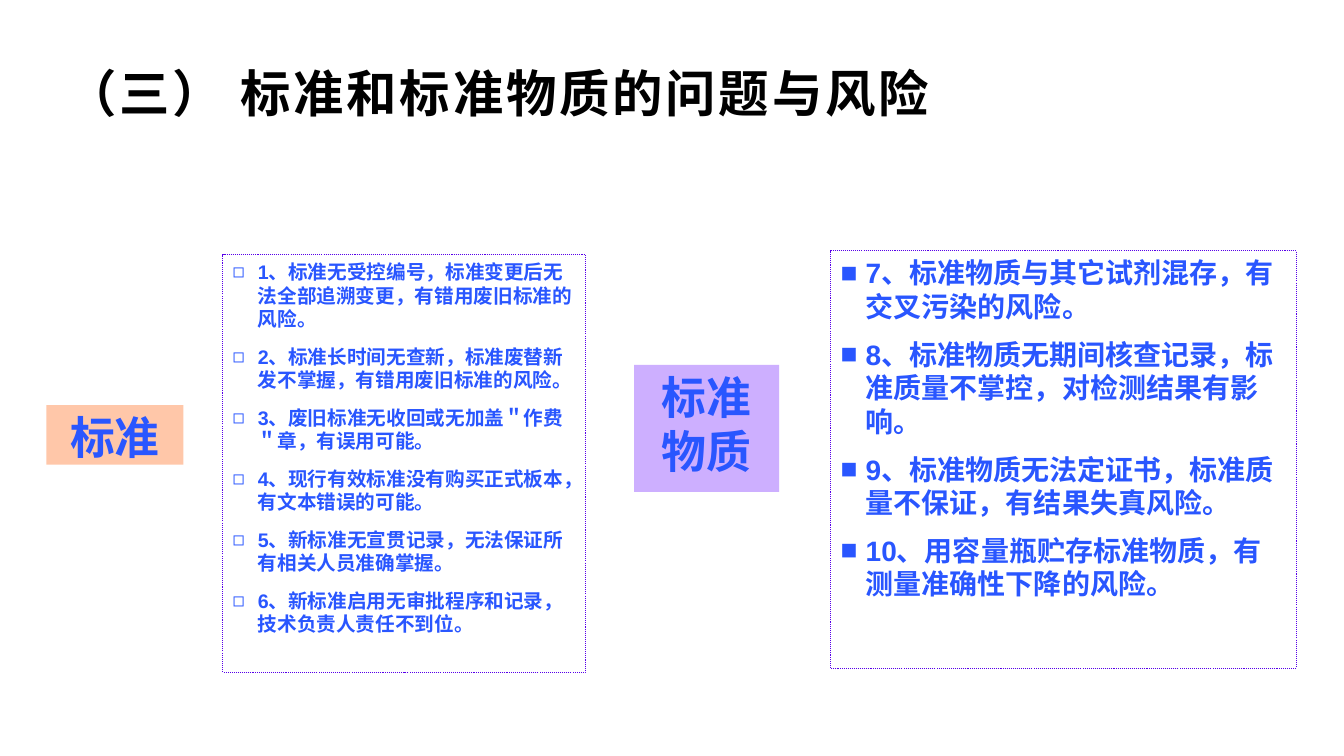
from lxml import etree
from pptx import Presentation
from pptx import util as u
from pptx.dml import color
from pptx.enum import dml, shapes, text
from pptx.oxml import ns

INCH = 72
BLUE, VIOLET = "2956FF", "5800E9"
TITLE = "（三） 标准和标准物质的问题与风险"
TITLE_BOX = (0.55, 0.58, 10.6, 0.68)
LABELS = [
    ("标准", (0.46, 4.02, 1.36, 0.59), "FFC7A9"),
    ("标准物质", (6.29, 3.62, 1.44, 1.26), "CDAFFF"),
]
RISK_LISTS = [
    ((2.21, 2.53, 3.6, 4.14), 14, "◻", [
        "1、标准无受控编号，标准变更后无法全部追溯变更，有错用废旧标准的风险。",
        "2、标准长时间无查新，标准废替新发不掌握，有错用废旧标准的风险。",
        "3、废旧标准无收回或无加盖＂作费＂章，有误用可能。",
        "4、现行有效标准没有购买正式板本，有文本错误的可能。",
        "5、新标准无宣贯记录，无法保证所有相关人员准确掌握。",
        "6、新标准启用无审批程序和记录，技术负责人责任不到位。",
    ]),
    ((8.24, 2.49, 4.62, 4.14), 20, "■", [
        "7、标准物质与其它试剂混存，有交叉污染的风险。",
        "8、标准物质无期间核查记录，标准质量不掌控，对检测结果有影响。",
        "9、标准物质无法定证书，标准质量不保证，有结果失真风险。",
        "10、用容量瓶贮存标准物质，有测量准确性下降的风险。",
    ]),
]


def rgb(code):
    return color.RGBColor.from_string(code)


def points(box):
    return [u.Pt(side * INCH) for side in box]


def add_run(paragraph, words, size, font, ink):
    run = paragraph.add_run()
    run.text = words
    run.font.size = u.Pt(size)
    run.font.name = font
    run.font.bold = True
    run.font.color.rgb = rgb(ink)
    properties = run._r.get_or_add_rPr()
    etree.SubElement(properties, ns.qn("a:ea")).set("typeface", font)
    return properties


def add_bullet(paragraph, mark):
    properties = paragraph._p.get_or_add_pPr()
    properties.set("marL", str(u.Pt(18)))
    properties.set("indent", str(-u.Pt(18)))
    etree.SubElement(properties, ns.qn("a:buFont")).set("typeface", "Arial")
    etree.SubElement(properties, ns.qn("a:buChar")).set("char", mark)


def add_box(slide, box, lines, size, align, fill=None, mark=None):
    shape = slide.shapes.add_shape(shapes.MSO_SHAPE.RECTANGLE, *points(box))
    shape.shadow.inherit = False
    if fill:
        shape.fill.solid()
        shape.fill.fore_color.rgb = rgb(fill)
        shape.line.fill.background()
    else:
        shape.fill.background()
        shape.line.color.rgb = rgb(VIOLET)
        shape.line.width = u.Pt(0.75)
        shape.line.dash_style = dml.MSO_LINE.ROUND_DOT
    frame = shape.text_frame
    frame.word_wrap = True
    frame.vertical_anchor = text.MSO_ANCHOR.TOP
    for index, words in enumerate(lines):
        paragraph = frame.add_paragraph() if index else frame.paragraphs[0]
        paragraph.alignment = align
        paragraph.space_before = u.Pt(10)
        paragraph.line_spacing = u.Pt(size * 1.2)
        if mark:
            add_bullet(paragraph, mark)
        add_run(paragraph, words, size, "Arial", BLUE)


def add_title(slide):
    frame = slide.shapes.add_textbox(*points(TITLE_BOX)).text_frame
    frame.word_wrap = True
    frame.vertical_anchor = text.MSO_ANCHOR.MIDDLE
    frame.margin_left, frame.margin_right = u.Pt(8), u.Pt(6)
    frame.margin_top = frame.margin_bottom = u.Pt(3)
    properties = add_run(frame.paragraphs[0], TITLE, 36, "Noto Sans CJK SC", "000000")
    properties.set("spc", "200")


def main():
    presentation = Presentation()
    presentation.slide_width = u.Pt(960)
    presentation.slide_height = u.Pt(540)
    slide = presentation.slides.add_slide(presentation.slide_layouts[6])
    add_title(slide)
    for (label, label_box, fill), (box, size, mark, risks) in zip(LABELS, RISK_LISTS):
        add_box(slide, label_box, [label], 32, text.PP_ALIGN.CENTER, fill=fill)
        add_box(slide, box, risks, size, text.PP_ALIGN.LEFT, mark=mark)
    presentation.save("out.pptx")


if __name__ == "__main__":
    main()
